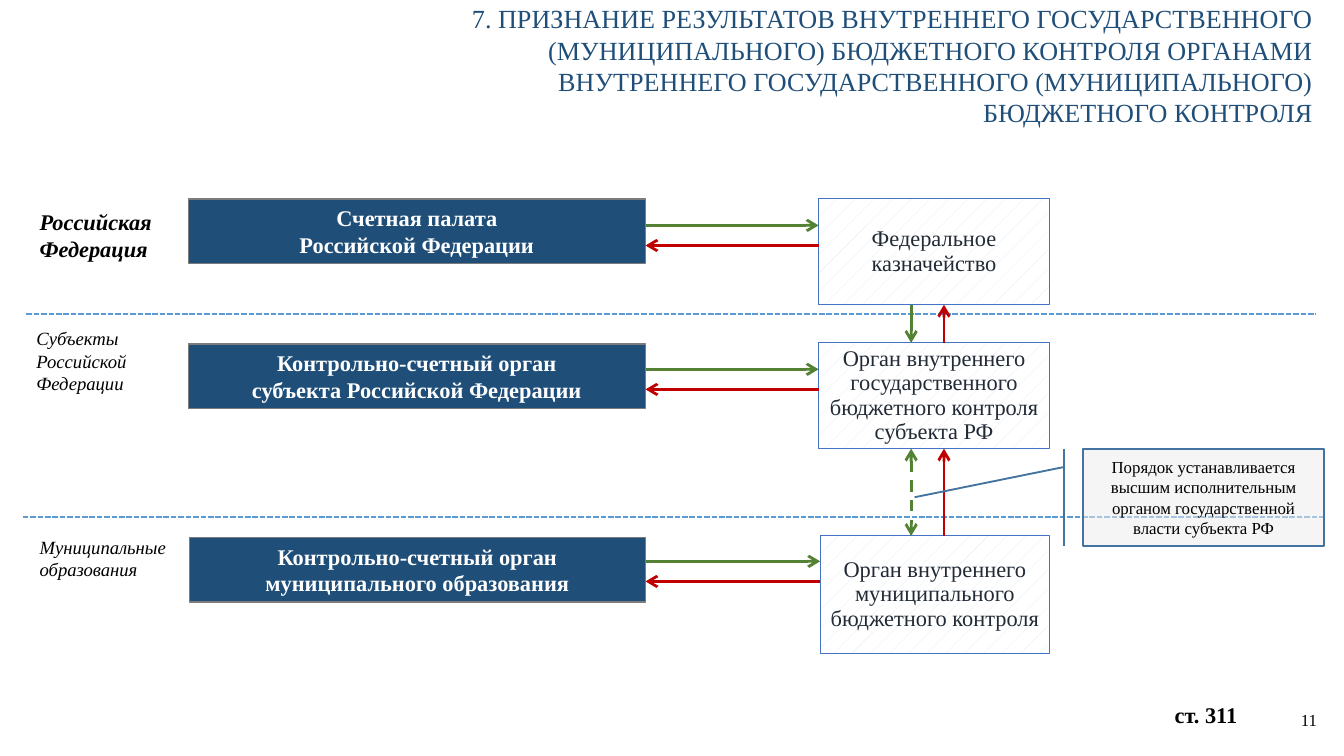
from collections import namedtuple

from lxml.etree import SubElement
from pptx import Presentation
from pptx.dml.color import RGBColor
from pptx.enum.dml import MSO_LINE, MSO_PATTERN
from pptx.enum.shapes import MSO_CONNECTOR, MSO_SHAPE
from pptx.enum.text import MSO_ANCHOR, PP_ALIGN
from pptx.oxml.ns import qn
from pptx.util import Cm, Pt

NAVY, GREEN, RED, BLACK = "1F4E79", "548235", "C00000", "000000"
Box = namedtuple("Box", "left top width height")
WIDE_INSETS = (0.25, 0.13)
NARROW_INSETS = (0.18, 0.1)

TITLE = ("7. ПРИЗНАНИЕ РЕЗУЛЬТАТОВ ВНУТРЕННЕГО ГОСУДАРСТВЕННОГО "
         "(МУНИЦИПАЛЬНОГО) БЮДЖЕТНОГО КОНТРОЛЯ ОРГАНАМИ ВНУТРЕННЕГО "
         "ГОСУДАРСТВЕННОГО (МУНИЦИПАЛЬНОГО) БЮДЖЕТНОГО КОНТРОЛЯ")
ORDER_NOTE = ("Порядок устанавливается высшим исполнительным органом "
              "государственной власти субъекта РФ")

# level name, its box, its font, audit body, its box, control body, its box, arrow height
LEVELS = [
    ("Российская Федерация", Box(0.5, 3.81, 3.76, 1.27),
     {"size": Pt(12), "bold": True, "italic": True},
     ["Счетная палата", "Российской Федерации"], Box(3.56, 3.76, 8.64, 1.22),
     "Федеральное казначейство", Box(15.47, 3.76, 4.37, 2), 4.26),
    ("Субъекты Российской Федерации", Box(0.44, 6.05, 3.76, 1.55),
     {"size": Pt(10), "italic": True},
     ["Контрольно-счетный орган", "субъекта Российской Федерации"],
     Box(3.56, 6.5, 8.64, 1.22),
     "Орган внутреннего государственного бюджетного контроля субъекта РФ",
     Box(15.47, 6.48, 4.37, 2), 6.98),
    ("Муниципальные образования", Box(0.5, 10, 3.76, 1.12),
     {"size": Pt(10), "italic": True},
     ["Контрольно-счетный орган", "муниципального образования"],
     Box(3.58, 10.16, 8.62, 1.22),
     "Орган внутреннего муниципального бюджетного контроля",
     Box(15.5, 10.13, 4.34, 2.22), 10.61),
]


def color(hex_string):
    return RGBColor.from_string(hex_string)


def lengths(values):
    return [Cm(value) for value in values]


def write(shape, paragraphs, font, ink=BLACK, align=PP_ALIGN.LEFT,
          anchor=MSO_ANCHOR.TOP, insets=WIDE_INSETS, spacing=None):
    frame = shape.text_frame
    side, edge = lengths(insets)
    frame_format = {"word_wrap": True, "vertical_anchor": anchor,
                    "margin_left": side, "margin_right": side,
                    "margin_top": edge, "margin_bottom": edge}
    for name, value in frame_format.items():
        setattr(frame, name, value)
    frame.text = "\n".join(paragraphs)
    for paragraph in frame.paragraphs:
        paragraph.alignment = align
        paragraph.line_spacing = spacing
        for name, value in {"name": "Times New Roman", **font}.items():
            setattr(paragraph.font, name, value)
        paragraph.font.color.rgb = color(ink)


def add_text(slide, box, text, font, **layout):
    write(slide.shapes.add_textbox(*lengths(box)), [text], font, **layout)


def add_panel(slide, box, outline, weight, kind=MSO_SHAPE.RECTANGLE):
    panel = slide.shapes.add_shape(kind, *lengths(box))
    panel.shadow.inherit = False
    panel.line.color.rgb = color(outline)
    panel.line.width = Pt(weight)
    return panel


def add_line(slide, start, end, ink, weight=1.5, dash=None, ends=("tailEnd",)):
    """Draw a line with an open arrowhead at each of the given ends."""
    line = slide.shapes.add_connector(MSO_CONNECTOR.STRAIGHT, *lengths(start + end))
    line.line.color.rgb = color(ink)
    line.line.width = Pt(weight)
    if dash:
        line.line.dash_style = dash
    for end_name in ends:
        SubElement(line.line._get_or_add_ln(), qn("a:" + end_name), type="arrow")
    SubElement(line._element.spPr, qn("a:effectLst"))


def add_level(slide, name, name_box, name_font, audit, audit_box,
              control, control_box, arrow_top):
    """Place one level of government: name, audit body, control body, arrows."""
    add_text(slide, name_box, name, name_font)

    audit_panel = add_panel(slide, audit_box, "7C7C7C", 0.75)
    audit_panel.fill.solid()
    audit_panel.fill.fore_color.rgb = color(NAVY)
    write(audit_panel, audit, {"size": Pt(12), "bold": True}, "FFFFFF",
          PP_ALIGN.CENTER, insets=NARROW_INSETS)

    control_panel = add_panel(slide, control_box, "4472C4", 0.5)
    control_panel.fill.patterned()
    control_panel.fill.pattern = MSO_PATTERN.PERCENT_5
    control_panel.fill.fore_color.rgb = color("DEEBF7")
    control_panel.fill.back_color.rgb = color("FFFFFF")
    write(control_panel, [control], {"size": Pt(12)}, "222A35", PP_ALIGN.CENTER,
          MSO_ANCHOR.MIDDLE, (0.03, 0.03), 0.9)

    audit_side = audit_box.left + audit_box.width
    return_top = arrow_top + 0.38
    add_line(slide, (audit_side, arrow_top), (control_box.left, arrow_top), GREEN)
    add_line(slide, (control_box.left, return_top), (audit_side, return_top), RED)


def add_exchange(slide, upper, lower, **green_format):
    """Link two control bodies with a green arrow and a red one going up."""
    top, bottom = upper.top + upper.height, lower.top
    green_x, red_x = upper.left + 1.75, upper.left + 2.37
    add_line(slide, (green_x, top), (green_x, bottom), GREEN, **green_format)
    add_line(slide, (red_x, bottom), (red_x, top), RED)


def add_order_note(slide, box):
    note = add_panel(slide, box, "43739E", 1,
                     MSO_SHAPE.LINE_CALLOUT_1_BORDER_AND_ACCENT_BAR)
    for index, value in enumerate((0.19, -0.08, 0.5, -0.7)):
        note.adjustments[index] = value
    note.fill.solid()
    note.fill.fore_color.rgb = color("EDEDED")
    tint = note._element.spPr.find(qn("a:solidFill"))[0]
    SubElement(tint, qn("a:alpha"), val="50000")
    write(note, [ORDER_NOTE], {"size": Pt(9)}, align=PP_ALIGN.CENTER,
          anchor=MSO_ANCHOR.MIDDLE)


def main():
    presentation = Presentation()
    presentation.slide_width, presentation.slide_height = lengths((25.4, 14.29))
    slide = presentation.slides.add_slide(presentation.slide_layouts[6])

    for left, right, top in ((0.5, 24.88, 5.94), (0.43, 25, 9.78)):
        add_line(slide, (left, top), (right, top), "5B9BD5", 1,
                 MSO_LINE.SQUARE_DOT, ends=())
    for level in LEVELS:
        add_level(slide, *level)
    federal, regional, municipal = [level[6] for level in LEVELS]
    add_exchange(slide, federal, regional)
    add_exchange(slide, regional, municipal, dash=MSO_LINE.DASH,
                 ends=("headEnd", "tailEnd"))
    add_order_note(slide, Box(20.47, 8.48, 4.55, 1.84))

    add_text(slide, Box(8.66, 0.56, 16.33, 1.35), TITLE, {"size": Pt(14)}, ink=NAVY,
             align=PP_ALIGN.RIGHT, anchor=MSO_ANCHOR.MIDDLE, insets=NARROW_INSETS)
    add_text(slide, Box(21.95, 13.13, 1.88, 0.76), "ст. 311",
             {"size": Pt(12), "bold": True})
    add_text(slide, Box(24.23, 13.23, 0.84, 0.76), "11", {"size": Pt(9)},
             align=PP_ALIGN.RIGHT, anchor=MSO_ANCHOR.MIDDLE, insets=NARROW_INSETS)
    presentation.save("out.pptx")


if __name__ == "__main__":
    main()
